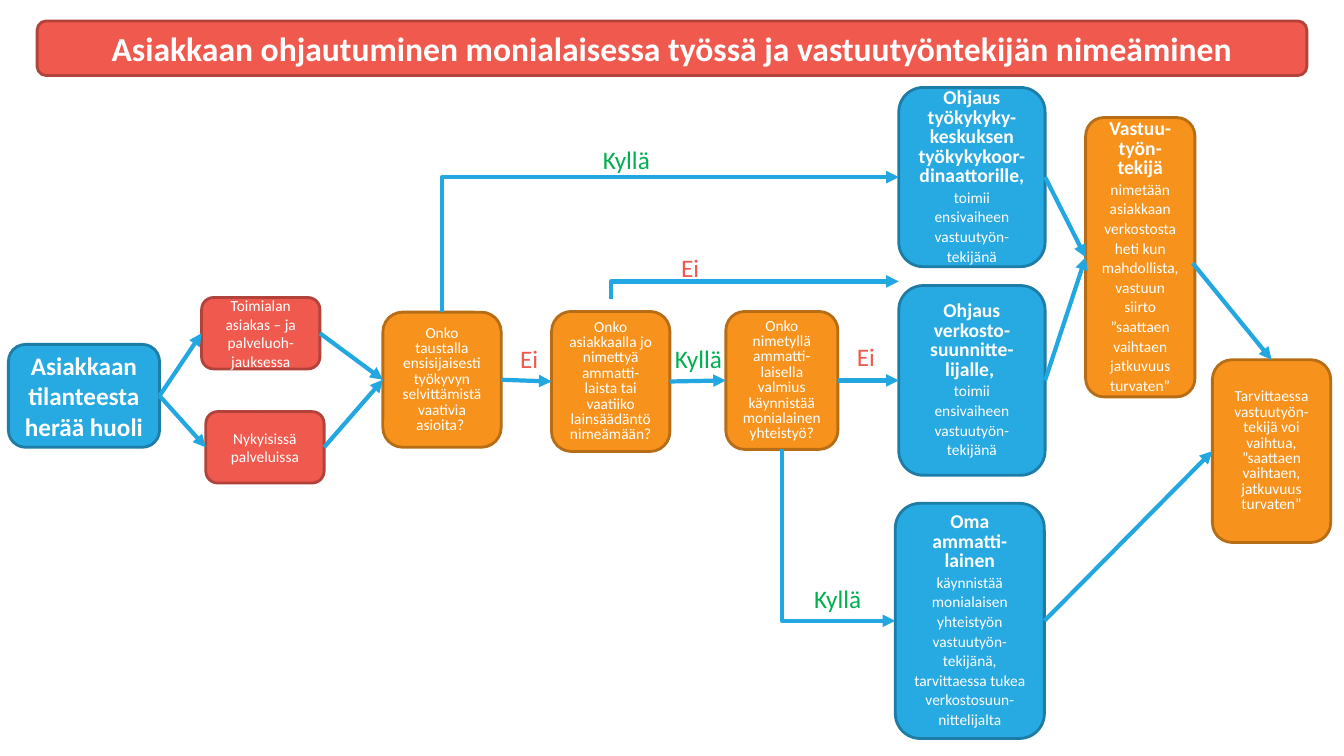
"""Build a slide with a flow chart of client guidance and naming of the worker in charge."""
from lxml import etree
from pptx import Presentation
from pptx.dml.color import RGBColor
from pptx.enum.shapes import MSO_CONNECTOR, MSO_SHAPE
from pptx.enum.text import MSO_ANCHOR, PP_ALIGN
from pptx.oxml.ns import qn
from pptx.util import Pt

ROUND = MSO_SHAPE.ROUNDED_RECTANGLE
LINE = MSO_CONNECTOR.STRAIGHT
ELBOW = MSO_CONNECTOR.ELBOW
MIDDLE = MSO_ANCHOR.MIDDLE
CENTER = PP_ALIGN.CENTER

FONT = "Calibri"
WHITE = RGBColor(0xFF, 0xFF, 0xFF)
GREEN = RGBColor(0x00, 0xB0, 0x50)
CORAL = RGBColor(0xF0, 0x5A, 0x4E)
BRICK = RGBColor(0xB2, 0x43, 0x3A)
BLUE = RGBColor(0x27, 0xA9, 0xE1)
NAVY = RGBColor(0x1D, 0x7D, 0xA6)
AMBER = RGBColor(0xF7, 0x93, 0x1D)
BROWN = RGBColor(0xB7, 0x6D, 0x15)
ARROW = RGBColor(0x22, 0xA7, 0xE1)

RED_BOX = (CORAL, BRICK)
BLUE_BOX = (BLUE, NAVY)
AMBER_BOX = (AMBER, BROWN)

# name: (left, top, width, height), colours, line spacing, paragraphs of (text, size, bold)
BOXES = {
    "title": ((26.5, 15, 907, 39), RED_BOX, None, [[
        ("Asiakkaan ohjautuminen monialaisessa työssä ja vastuutyöntekijän nimeäminen", 24, True)]]),
    "worry": ((6, 246, 108, 73.5), BLUE_BOX, None, [[
        ("Asiakkaan tilanteesta herää huoli", 18, True)]]),
    "client": ((144, 212.5, 84.5, 51), RED_BOX, None, [[
        ("Toimialan asiakas – ja palveluoh-jauksessa", 11, False)]]),
    "present": ((147, 294, 84.5, 51), RED_BOX, None, [[
        ("Nykyisissä palveluissa", 11, False)]]),
    "needs": ((273.5, 223, 84.5, 96.5), AMBER_BOX, 11, [[
        ("Onko taustalla ensisijaisesti työkyvyn selvittämistä vaativia asioita? ", 11, False)]]),
    "named": ((394, 222.5, 84.5, 100), AMBER_BOX, 11, [[
        ("Onko asiakkaalla jo nimettyä ammatti-laista tai vaatiiko "
         "lainsäädäntö nimeämään?", 11, False)]]),
    "ready": ((518.5, 222.5, 80, 98.5), AMBER_BOX, 11, [[
        ("Onko nimetyllä ammatti-laisella valmius käynnistää monialainen yhteistyö?", 11, False)]]),
    "centre": ((642, 62.5, 104.5, 128), BLUE_BOX, 14, [[
        ("Ohjaus työkykyky-keskuksen työkykykoor-dinaattorille, ", 14, True),
        ("toimii ensivaiheen vastuutyön-tekijänä", 11, False)]]),
    "network": ((642, 204, 104.5, 135.5), BLUE_BOX, 14, [
        [("Ohjaus verkosto-suunnitte-lijalle, ", 14, True)],
        [("toimii ensivaiheen vastuutyön-tekijänä", 11, False)]]),
    "own": ((639.5, 359.5, 106.5, 168), BLUE_BOX, 14, [[
        ("Oma ammatti-lainen ", 14, True),
        ("käynnistää monialaisen yhteistyön vastuutyön-tekijänä, "
         "tarvittaessa tukea verkostosuun-nittelijalta", 11, False)]]),
    "charge": ((775.5, 84, 78, 199.5), AMBER_BOX, 14, [[
        ("Vastuu-työn-tekijä", 14, True),
        (" nimetään asiakkaan verkostosta heti kun mahdollista, vastuun siirto "
         "”saattaen vaihtaen jatkuvuus turvaten”", 11, False)]]),
    "change": ((866, 257, 84.5, 130.5), AMBER_BOX, 11, [[
        ("Tarvittaessa vastuutyön-tekijä voi vaihtua, "
         "”saattaen vaihtaen, jatkuvuus turvaten”", 11, False)]]),
}
LINKS = [
    ("worry", "client"), ("worry", "present"), ("client", "needs"), ("present", "needs"),
    ("needs", "named"), ("named", "ready"), ("ready", "network"),
    ("centre", "charge"), ("network", "charge"), ("own", "change"),
]
YES = ("Kyllä", GREEN, 48)
NO = ("Ei", CORAL, 27.5)
LABELS = [
    (YES, 423.5, 99.5), (NO, 364.5, 242), (YES, 574.5, 413), (YES, 475, 242),
    (NO, 605, 240), (NO, 479.5, 176.5),
]


def side(name, across, down):
    """Give the point at the given shares of a box's width and height."""
    left, top, width, height = BOXES[name][0]
    return left + across * width, top + down * height


def write(para, text, size, bold, color):
    """Add one run to a paragraph."""
    run = para.add_run()
    run.text = text
    font = run.font
    font.name, font.size, font.bold = FONT, Pt(size), bold
    font.color.rgb = color


def add_box(shapes, place, colors, space, paras):
    """Add a rounded box with centred text."""
    box = shapes.add_shape(ROUND, *map(Pt, place))
    box.shadow.inherit = False
    box.fill.solid()
    box.fill.fore_color.rgb, box.line.color.rgb = colors
    box.line.width = Pt(2)
    frame = box.text_frame
    frame.word_wrap = True
    frame.vertical_anchor = MIDDLE
    for i, runs in enumerate(paras):
        para = frame.add_paragraph() if i else frame.paragraphs[0]
        para.alignment = CENTER
        if space:
            para.line_spacing = Pt(space)
        for text, size, bold in runs:
            write(para, text, size, bold, WHITE)


def add_arrow(shapes, kind, start, end):
    """Add a connector with a triangle at its end."""
    link = shapes.add_connector(kind, *map(Pt, start + end))
    link.line.color.rgb = ARROW
    link.line.width = Pt(3)
    etree.SubElement(link.line._get_or_add_ln(), qn("a:tailEnd"), type="triangle")
    etree.SubElement(link._element.spPr, qn("a:effectLst"))
    return link


def add_bend(shapes, start, end):
    """Add an arrow that runs upright first and then to the right."""
    (x1, y1), (x2, y2) = start, end
    midx, midy = (x1 + x2) / 2, (y1 + y2) / 2
    rise, run = (y1 - y2) / 2, (x2 - x1) / 2
    bend = add_arrow(shapes, ELBOW, (midx - rise, midy - run), (midx + rise, midy + run))
    props = bend._element.spPr
    props.find(qn("a:xfrm")).set("rot", "16200000")
    props.find(qn("a:prstGeom")).set("prst", "bentConnector2")


def add_label(shapes, label, left, top):
    """Add a yes or no answer beside an arrow."""
    text, color, width = label
    frame = shapes.add_textbox(Pt(left), Pt(top), Pt(width), Pt(29)).text_frame
    frame.word_wrap = False
    write(frame.paragraphs[0], text, 18, False, color)


def main():
    """Build and save the slide."""
    deck = Presentation()
    deck.slide_width, deck.slide_height = Pt(960), Pt(540)
    shapes = deck.slides.add_slide(deck.slide_layouts[6]).shapes
    for box in BOXES.values():
        add_box(shapes, *box)
    for tail, head in LINKS:
        add_arrow(shapes, LINE, side(tail, 1, 0.5), side(head, 0, 0.5))
    add_arrow(shapes, LINE, (852, 188), side("change", 0.5, 0))
    add_bend(shapes, side("needs", 0.5, 0), side("centre", 0, 0.5))
    add_bend(shapes, side("ready", 0.5, 1), side("own", 0, 0.5))
    add_bend(shapes, (436.5, 213.5), (642, 201))
    for label in LABELS:
        add_label(shapes, *label)
    deck.save("out.pptx")


if __name__ == "__main__":
    main()
